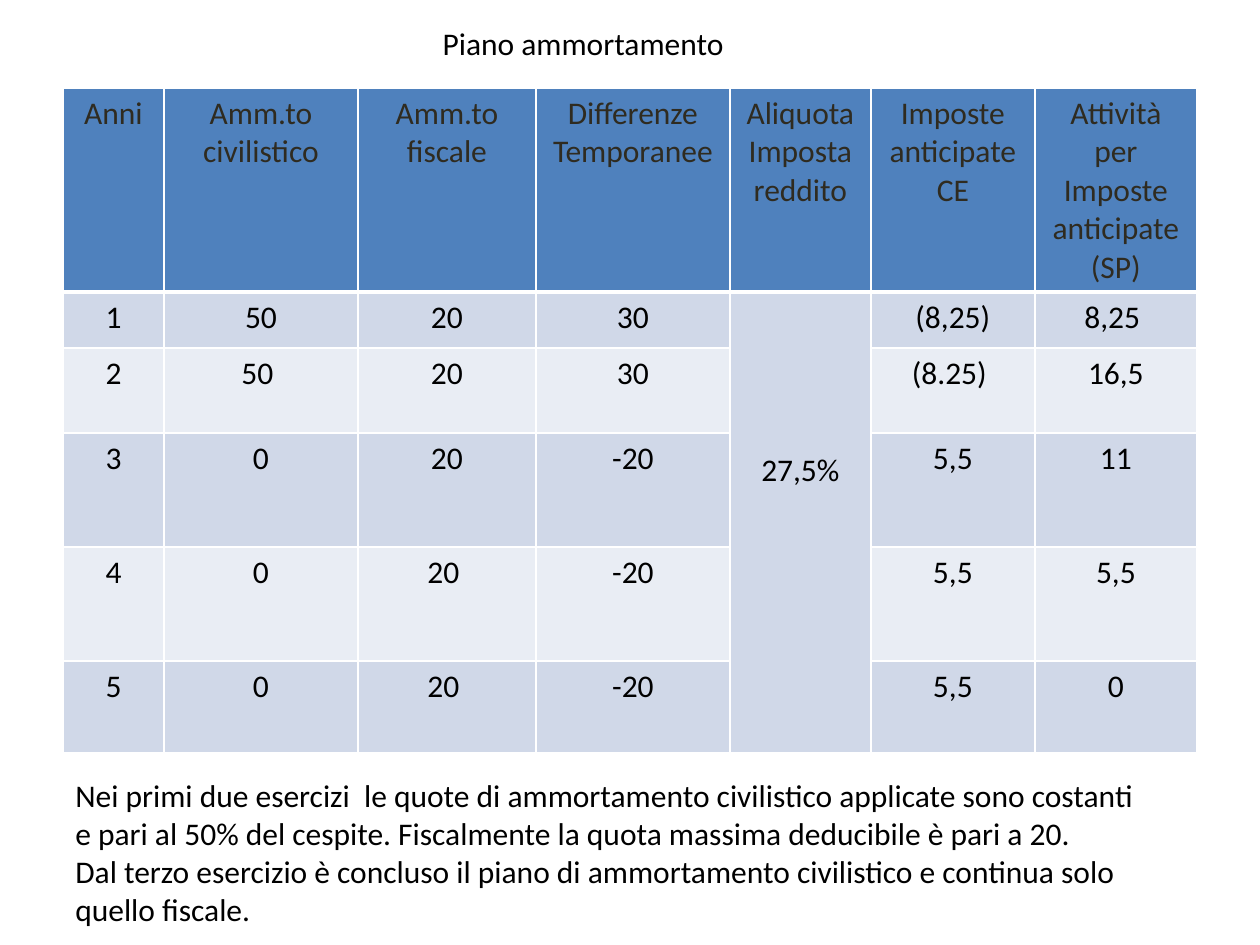
from dataclasses import dataclass
from lxml.etree import SubElement
from pptx import Presentation
from pptx.dml.color import RGBColor
from pptx.enum.text import MSO_ANCHOR, MSO_AUTO_SIZE, PP_ALIGN
from pptx.oxml.ns import qn
from pptx.util import Pt

SCALE = 914400 / 126


@dataclass(frozen=True)
class Theme:
    font: str = "Calibri"
    size: int = 18
    ink: str = "000000"
    label: str = "2F2B20"
    head: str = "4F81BD"
    odd: str = "D0D8E8"
    even: str = "E9EDF4"
    rule: str = "FFFFFF"


THEME = Theme()

HEADS = [
    "Anni", "Amm.to civilistico", "Amm.to fiscale", "Differenze Temporanee",
    "Aliquota\nImposta reddito", "Imposte anticipate CE",
    "Attività per Imposte anticipate (SP)",
]
YEARS = [
    ["1", "50", "20", "30", "27,5%", "(8,25)", "8,25 "],
    ["2", "50 ", "20", "30", "", "(8.25) ", "16,5"],
    ["3", "0", "20", "-20", "", "5,5", "11"],
    ["4", "0", "20 ", "-20", "", "5,5", "5,5"],
    ["5", "0", "20 ", "-20", "", "5,5", "0"],
]
WIDTHS = [101, 194, 178, 194, 141, 164, 162]
HEIGHTS = [204, 56, 85, 114, 114, 92]
RATE = 4
NOTES = [
    "Nei primi due esercizi  le quote di ammortamento civilistico applicate sono costanti",
    "e pari al 50% del cespite. Fiscalmente la quota massima deducibile è pari a 20.",
    "Dal terzo esercizio è concluso il piano di ammortamento civilistico e continua solo quello fiscale.",
]


def px(count):
    return round(count * SCALE)


def write(frame, text, color=THEME.ink, align=PP_ALIGN.LEFT):
    frame.text = text
    for para in frame.paragraphs:
        para.alignment = align
        for run in para.runs:
            font = run.font
            font.name = THEME.font
            font.size = Pt(THEME.size)
            font.bold = False
            font.color.rgb = RGBColor.from_string(color)


def edge(cell, side, width):
    line = SubElement(cell._tc.get_or_add_tcPr(), qn("a:ln" + side), w=str(Pt(width)))
    fill = SubElement(line, qn("a:solidFill"))
    SubElement(fill, qn("a:srgbClr"), val=THEME.rule)


def paint(cell, row):
    for side in "LRTB":
        thick = (row == 0 and side == "B") or (row == 1 and side == "T")
        edge(cell, side, 3 if thick else 1)
    tone = THEME.head if row == 0 else THEME.odd if row % 2 else THEME.even
    cell.fill.solid()
    cell.fill.fore_color.rgb = RGBColor.from_string(tone)


def add_title(slide, left, top, width, height):
    title = slide.shapes.title
    title.left, title.top = px(left), px(top)
    title.width, title.height = px(width), px(height)
    frame = title.text_frame
    frame.word_wrap = False
    frame.auto_size = MSO_AUTO_SIZE.SHAPE_TO_FIT_TEXT
    frame.vertical_anchor = MSO_ANCHOR.TOP
    write(frame, "Piano ammortamento")


def add_plan(slide, left, top):
    data = [HEADS] + YEARS
    shape = slide.shapes.add_table(
        len(data), len(HEADS), px(left), px(top), px(sum(WIDTHS)), px(sum(HEIGHTS)))
    table = shape.table
    for col, width in zip(table.columns, WIDTHS):
        col.width = px(width)
    for row, height in zip(table.rows, HEIGHTS):
        row.height = px(height)
    for r, line in enumerate(data):
        for c, text in enumerate(line):
            cell = table.cell(r, c)
            paint(cell, r)
            if text:
                write(cell.text_frame, text, align=PP_ALIGN.CENTER,
                      color=THEME.ink if r else THEME.label)
    rate = table.cell(1, RATE)
    rate.merge(table.cell(len(YEARS), RATE))
    rate.margin_top = px(160)


def add_notes(slide, left, top, width, height):
    box = slide.shapes.add_textbox(px(left), px(top), px(width), px(height))
    frame = box.text_frame
    frame.word_wrap = True
    frame.auto_size = MSO_AUTO_SIZE.SHAPE_TO_FIT_TEXT
    write(frame, "\n".join(NOTES))


def main():
    deck = Presentation()
    deck.slide_width, deck.slide_height = px(1260), px(945)
    slide = deck.slides.add_slide(deck.slide_layouts[5])
    add_plan(slide, 63, 88)
    add_notes(slide, 63, 770, 1134, 165)
    add_title(slide, 430, 18, 310, 50)
    deck.save("out.pptx")


if __name__ == "__main__":
    main()
